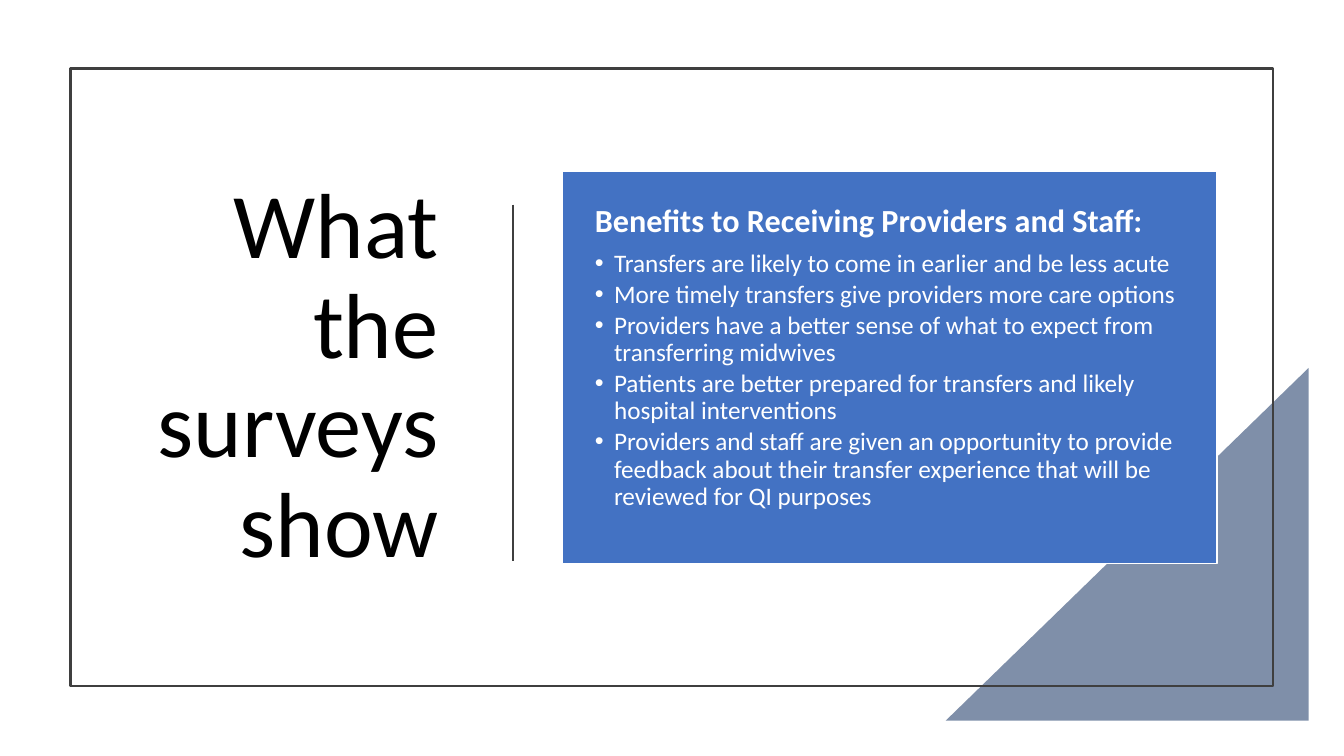
import pptx
import pptx.util
import pptx.dml.color
import pptx.enum.shapes
import pptx.enum.text
import pptx.oxml
import pptx.oxml.ns
import lxml.etree

WIDTH, HEIGHT = 13.33, 7.5
FONT = "Calibri"
INK, WHITE, BLUE, SLATE = "3F3F3F", "FFFFFF", "4372C3", "7F8FA9"
HEADING = "Benefits to Receiving Providers and Staff:"
BENEFITS = [
    "Transfers are likely to come in earlier and be less acute",
    "More timely transfers give providers more care options",
    "Providers have a better sense of what to expect from transferring midwives",
    "Patients are better prepared for transfers and likely hospital interventions",
    "Providers and staff are given an opportunity to provide feedback about "
    "their transfer experience that will be reviewed for QI purposes",
]


def colour(code):
    return pptx.dml.color.RGBColor.from_string(code)


def inches(values):
    return [pptx.util.Inches(value) for value in values]


def child(parent, tag, **attributes):
    name = pptx.oxml.ns.qn(tag)
    return lxml.etree.SubElement(parent, name, attributes)


def paint(shape, fill=None, line=None, weight=1):
    if fill:
        shape.fill.solid()
        shape.fill.fore_color.rgb = colour(fill)
    else:
        shape.fill.background()
    if line:
        shape.line.color.rgb = colour(line)
        shape.line.width = pptx.util.Pt(weight)
    else:
        shape.line.fill.background()


def add_block(page, kind, box, **style):
    shape = page.shapes.add_shape(kind, *inches(box))
    shape.shadow.inherit = False
    paint(shape, **style)
    return shape


def place(holder, box, margins, anchor):
    holder.left, holder.top, holder.width, holder.height = inches(box)
    holder.element.getparent().append(holder.element)
    frame = holder.text_frame
    frame.word_wrap = True
    frame.auto_size = pptx.enum.text.MSO_AUTO_SIZE.NONE
    frame.vertical_anchor = anchor
    across, down = inches(margins)
    frame.margin_left = frame.margin_right = across
    frame.margin_top = frame.margin_bottom = down
    return frame


def write(para, text, size, ink, align, bold=False, before=0):
    para.alignment = align
    para.line_spacing = 0.9
    para.space_before = pptx.util.Pt(before)
    span = para.add_run()
    span.text = text
    span.font.name = FONT
    span.font.size = pptx.util.Pt(size)
    span.font.bold = bold
    span.font.color.rgb = colour(ink)


def set_bullet(para, mark=None, indent=0):
    properties = para._p.get_or_add_pPr()
    step = pptx.util.Inches(indent)
    properties.set("marL", str(step))
    properties.set("indent", str(-step))
    if mark:
        child(child(properties, "a:buClr"), "a:srgbClr", val=WHITE)
        child(properties, "a:buFont", typeface="Arial")
        child(properties, "a:buChar", char=mark)
    else:
        child(properties, "a:buNone")


def add_backdrop(page, box):
    left, top, width, height = box
    shapes = pptx.enum.shapes.MSO_SHAPE
    corner = (left + width - 3.95, top + height - 3.85, 3.6, 3.5)
    triangle = add_block(page, shapes.RIGHT_TRIANGLE, corner, fill=SLATE)
    triangle.element.spPr.get_or_add_xfrm().set("flipH", "1")
    border = (left + 0.7, top + 0.68, width - 1.4, height - 1.37)
    add_block(page, shapes.RECTANGLE, border, line=INK, weight=1.5)


def add_title(page, box):
    frame = place(page.shapes.title, box, (0.1, 0.05), pptx.enum.text.MSO_ANCHOR.MIDDLE)
    write(frame.paragraphs[0], "What the surveys show", 66, "000000",
          pptx.enum.text.PP_ALIGN.RIGHT)


def add_divider(page, box):
    left, top, width, height = box
    ends = inches((left, top, left + width, top + height))
    rule = page.shapes.add_connector(pptx.enum.shapes.MSO_CONNECTOR.STRAIGHT, *ends)
    rule.line.color.rgb = colour(INK)
    rule.line.width = pptx.util.Pt(1.5)
    child(rule.element.spPr, "a:effectLst")


def add_benefits(page, box):
    panel = page.placeholders[1]
    frame = place(panel, box, (0.32, 0.33), pptx.enum.text.MSO_ANCHOR.TOP)
    paint(panel, fill=BLUE, line=WHITE)
    left = pptx.enum.text.PP_ALIGN.LEFT
    write(frame.paragraphs[0], HEADING, 23, WHITE, left, bold=True)
    set_bullet(frame.paragraphs[0])
    for index, benefit in enumerate(BENEFITS):
        para = frame.add_paragraph()
        para.level = 1
        write(para, benefit, 18, WHITE, left, before=2.7 if index else 8.1)
        set_bullet(para, "•", 0.19)


def main():
    deck = pptx.Presentation()
    deck.slide_width, deck.slide_height = inches((WIDTH, HEIGHT))
    page = deck.slides.add_slide(deck.slide_layouts[1])
    page.background.fill.solid()
    page.background.fill.fore_color.rgb = colour(WHITE)
    add_backdrop(page, (0, 0, WIDTH, HEIGHT))
    add_title(page, (1.18, 1.3, 3.27, 4.9))
    add_divider(page, (5.09, 2.03, 0, 3.54))
    add_benefits(page, (5.58, 1.7, 6.49, 3.89))
    deck.save("out.pptx")


if __name__ == "__main__":
    main()
